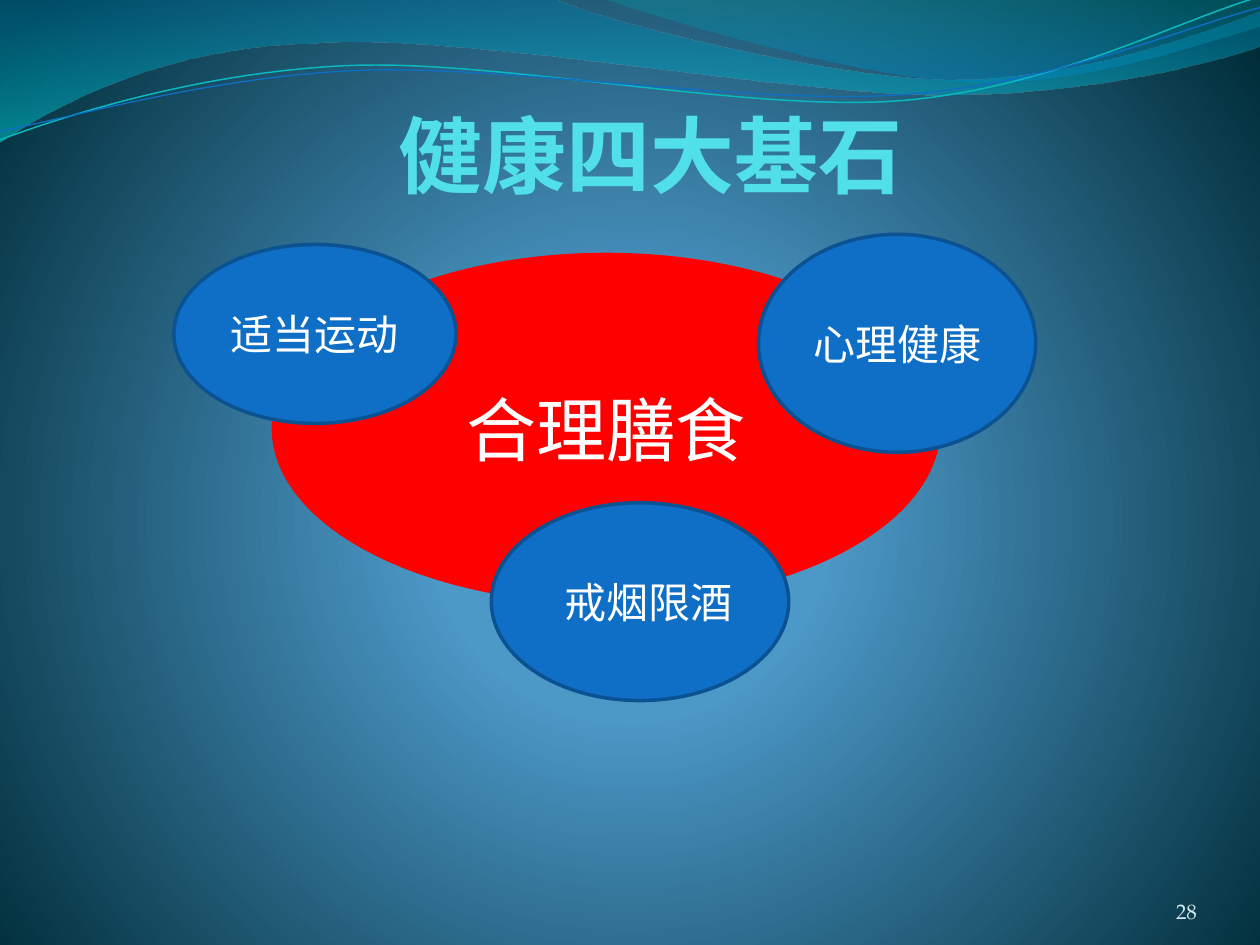
import math

from lxml import etree
from pptx import Presentation
from pptx import util as u
from pptx.dml.color import RGBColor
from pptx.enum import shapes, text
from pptx.oxml.ns import qn

PX = u.Inches(1) // 100  # one hundred px to the inch
STRAND_TILT = 2.7  # degrees, counter-clockwise

RED = RGBColor(0xFF, 0x00, 0x00)
BLUE = RGBColor(0x0F, 0x6F, 0xC6)
DARK_BLUE = RGBColor(0x0B, 0x52, 0x92)
TEAL = RGBColor(0x0A, 0xB8, 0xBF)
CYAN = RGBColor(0x51, 0xE0, 0xEA)
PALE = RGBColor(0xD1, 0xEA, 0xEE)
WHITE = RGBColor(0xFF, 0xFF, 0xFF)
SKY = RGBColor(0x4A, 0xA0, 0xD6)
STEEL = RGBColor(0x4C, 0x98, 0xC7)
NIGHT = RGBColor(0x00, 0x2C, 0x38)
OCEAN = RGBColor(0x00, 0x74, 0xA1)
AQUA = RGBColor(0x00, 0xC6, 0xCF)
LAGOON = RGBColor(0x00, 0xA1, 0xA9)
AZURE = RGBColor(0x00, 0x8B, 0xBF)

SERIF = "TeX Gyre Pagella"
CENTER, RIGHT = text.PP_ALIGN.CENTER, text.PP_ALIGN.RIGHT

# Each segment is a list of points: one for a line, three for a Bezier curve
BROAD_WAVE = [
    [(0, 0)], [(440, -1)],
    [(476, 17), (664, 63), (758, 63)], [(853, 63), (958, 26), (1000, 9)],
    [(1001, 36)],
    [(983, 44), (870, 76), (746, 75)], [(622, 75), (382, 28), (257, 34)],
    [(129, 36), (46, 83), (-1, 113)],
]
CORNER_WAVE = [
    [(479, -1)],
    [(509, 11), (682, 62), (769, 65)], [(856, 69), (961, 32), (1000, 21)],
    [(1000, 0)],
]
TEAL_STRAND = [
    [(0, 111)],
    [(48, 93), (158, 57), (277, 52)], [(395, 47), (593, 89), (713, 80)],
    [(833, 71), (938, 15), (998, -2)],
]
BLUE_STRAND = [
    [(0, 104)],
    [(47, 96), (164, 61), (283, 56)], [(403, 51), (597, 84), (717, 75)],
    [(836, 67), (941, 21), (1000, 6)],
]


def set_gradient(parent, stops, angle=None):
    """Swap the solid fill in parent for a linear, or else circular, gradient."""
    grad = etree.Element(qn("a:gradFill"), rotWithShape="1")
    stop_list = etree.SubElement(grad, qn("a:gsLst"))
    for position, color, opacity in stops:
        stop = etree.SubElement(stop_list, qn("a:gs"), pos=str(position * 1000))
        srgb = etree.SubElement(stop, qn("a:srgbClr"), val=str(color))
        if opacity < 100:
            etree.SubElement(srgb, qn("a:alpha"), val=str(opacity * 1000))
    if angle is None:
        shade = etree.SubElement(grad, qn("a:path"), path="circle")
        etree.SubElement(shade, qn("a:fillToRect"),
                         l="10000", t="110000", r="10000", b="100000")
    else:
        etree.SubElement(grad, qn("a:lin"), ang=str(angle * 60000), scaled="0")
    parent.replace(parent.find(qn("a:solidFill")), grad)


def add_wave(page, segments, close):
    """Draw the points as an outline, then join each group of three as a curve."""
    (x, y), = segments[0]
    points = [(px * PX, py * PX) for segment in segments[1:] for px, py in segment]
    builder = page.shapes.build_freeform(x * PX, y * PX, scale=1.0)
    builder.add_line_segments(points, close=close)
    wave = builder.convert_to_shape()
    wave.shadow.inherit = False
    lines = iter(list(wave._element.iter(qn("a:lnTo"))))
    for segment in segments[1:]:
        first, *others = [next(lines) for _ in segment]
        if others:
            first.tag = qn("a:cubicBezTo")
            for line in others:
                first.append(line[0])
                line.getparent().remove(line)
    return wave


def add_band(page, segments, stops):
    band = add_wave(page, segments, True)
    band.line.fill.background()
    band.fill.solid()
    set_gradient(band._element.spPr, stops, 90)


def level(segments, pivot):
    """Turn the points clockwise about the pivot, undoing the strand's tilt."""
    sine, cosine = math.sin(math.radians(STRAND_TILT)), math.cos(math.radians(STRAND_TILT))
    cx, cy = pivot
    return [[(cx + (x - cx) * cosine - (y - cy) * sine,
              cy + (x - cx) * sine + (y - cy) * cosine) for x, y in segment]
            for segment in segments]


def add_strand(page, segments, pivot, color, width):
    strand = add_wave(page, level(segments, pivot), False)
    strand.rotation = 360 - STRAND_TILT
    strand.fill.background()
    strand.line.color.rgb = color
    strand.line.width = u.Pt(width)


def write(box, words, size, color, font=SERIF, align=CENTER,
          anchor=text.MSO_ANCHOR.MIDDLE, bold=False):
    frame = box.text_frame
    frame.word_wrap = True
    frame.vertical_anchor = anchor
    para = frame.paragraphs[0]
    para.text = words
    para.alignment = align
    para.font.name = font
    para.font.size = u.Pt(size)
    para.font.bold = bold
    para.font.color.rgb = color


def clear_margins(box):
    frame = box.text_frame
    frame.margin_left = frame.margin_top = frame.margin_bottom = frame.margin_right = 0


def add_ellipse(page, place, words, fill=BLUE, line=DARK_BLUE, size=24, **style):
    ellipse = page.shapes.add_shape(shapes.MSO_SHAPE.OVAL, *(n * PX for n in place))
    ellipse.shadow.inherit = False
    ellipse.fill.solid()
    ellipse.fill.fore_color.rgb = fill
    ellipse.line.color.rgb = line
    ellipse.line.width = u.Pt(2)
    write(ellipse, words, size, WHITE, **style)


def add_title(page, place, words):
    title = page.shapes.title
    title.left, title.top, title.width, title.height = (n * PX for n in place)
    clear_margins(title)
    title.text_frame.margin_right = 2 * PX
    write(title, words, 48, CYAN, "Calibri", anchor=text.MSO_ANCHOR.BOTTOM, bold=True)


def add_page_number(page, place, number):
    box = page.shapes.add_textbox(*(n * PX for n in place))
    clear_margins(box)
    write(box, number, 12, PALE, align=RIGHT, anchor=text.MSO_ANCHOR.BOTTOM)


def main():
    deck = Presentation()
    deck.slide_width, deck.slide_height = 1000 * PX, 750 * PX
    page = deck.slides.add_slide(deck.slide_layouts[0])
    subtitle = page.placeholders[1]._element
    subtitle.getparent().remove(subtitle)

    # Background glow
    page.background.fill.solid()
    set_gradient(page.element.find(".//" + qn("p:bgPr")),
                 [(0, SKY, 100), (25, STEEL, 100), (100, NIGHT, 100)])

    # Waves along the top
    add_band(page, BROAD_WAVE, [(0, OCEAN, 45), (100, AQUA, 55)])
    add_band(page, CORNER_WAVE, [(0, LAGOON, 30), (80, AZURE, 45)])
    add_strand(page, TEAL_STRAND, (499, 57.5), TEAL, 0.85)
    add_strand(page, BLUE_STRAND, (499.5, 59), BLUE, 0.75)

    # Title and page number
    add_title(page, (0, 52, 1035, 110), "健康四大基石")
    add_page_number(page, (717, 683, 233, 50), "28")

    # Central cornerstone with the three others around it
    add_ellipse(page, (217, 202, 528, 276), "合理膳食", RED, RED, 40,
                font="Noto Sans CJK SC")
    add_ellipse(page, (390, 399, 236, 157), "戒烟限酒", align=RIGHT)
    add_ellipse(page, (138, 194, 224, 142), "适当运动")
    add_ellipse(page, (602, 186, 220, 173), "心理健康")

    deck.save("out.pptx")


if __name__ == "__main__":
    main()
